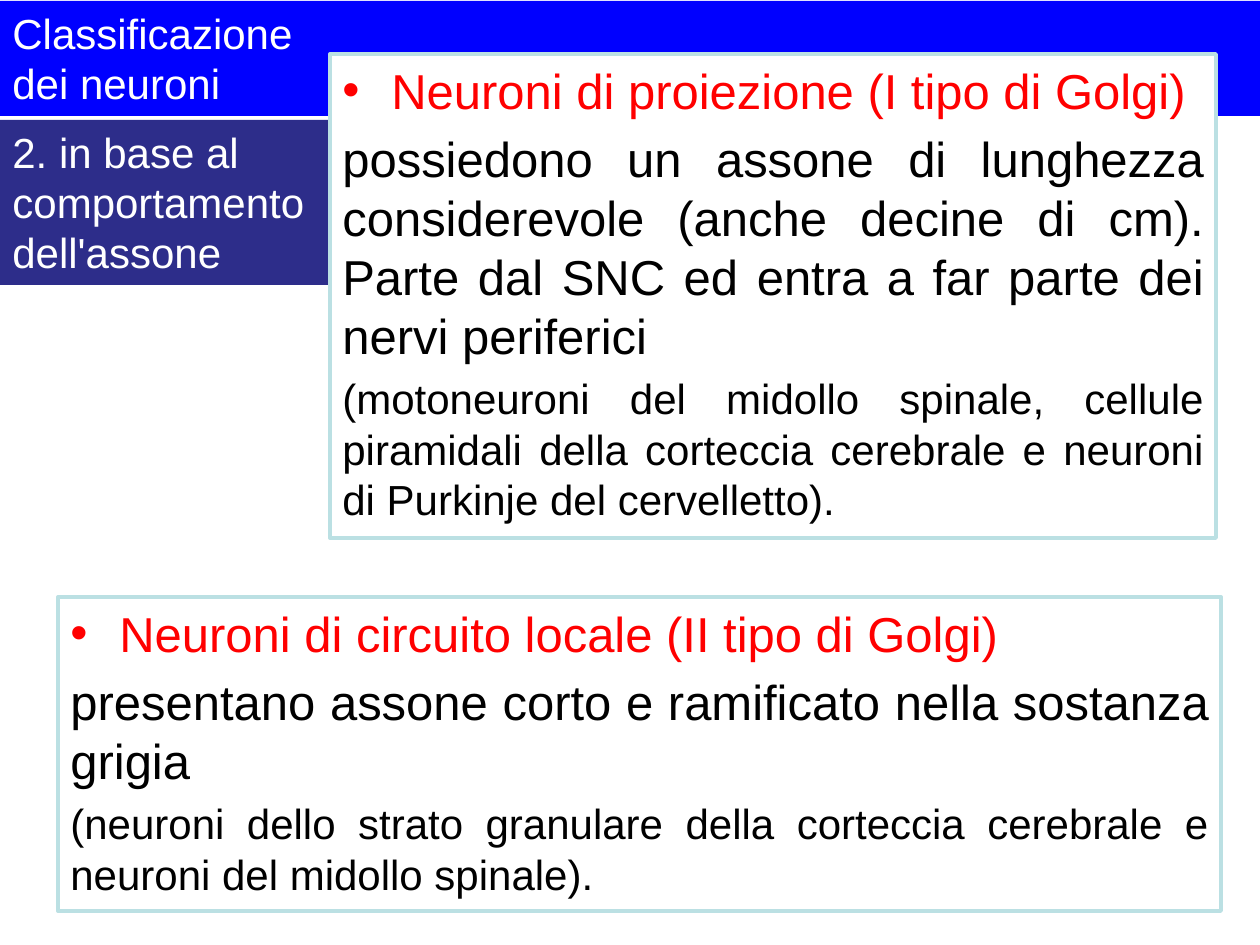
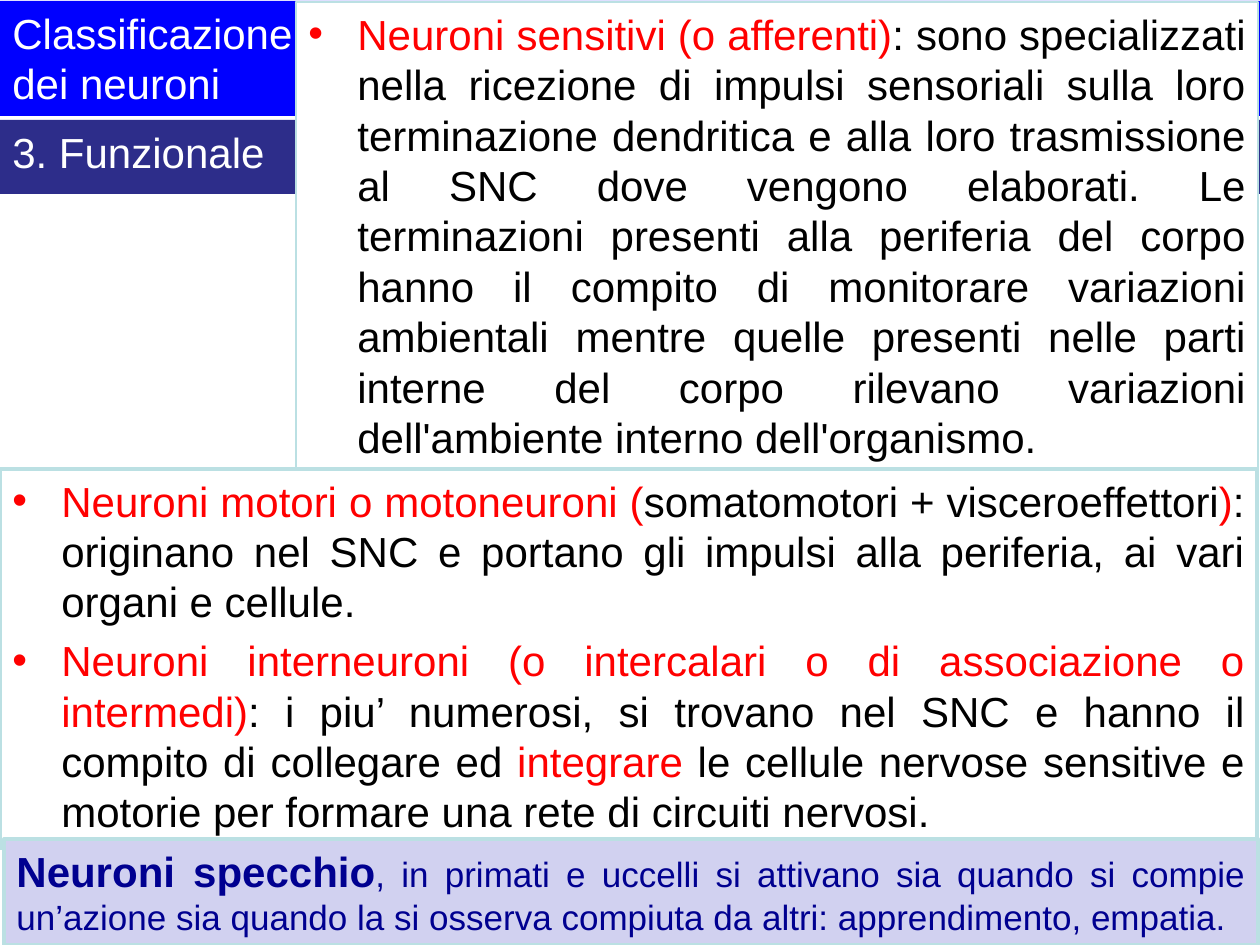
from dataclasses import dataclass

from lxml import etree
from pptx import Presentation
from pptx.dml.color import RGBColor
from pptx.enum.shapes import MSO_SHAPE
from pptx.enum.text import MSO_ANCHOR, PP_ALIGN
from pptx.oxml.ns import qn
from pptx.util import Emu, Pt

RECTANGLE = MSO_SHAPE.RECTANGLE
TOP = MSO_ANCHOR.TOP
LEFT = PP_ALIGN.LEFT
JUSTIFY = PP_ALIGN.JUSTIFY
SLIDE_WIDTH, SLIDE_HEIGHT = 1260, 945


@dataclass(frozen=True)
class Theme:
    font: str = "Arial"
    white: str = "FFFFFF"
    black: str = "000000"
    red: str = "FF0000"
    title_band: str = "0000FF"
    topic_band: str = "2D2D8A"
    border: str = "BBE0E3"
    note_fill: str = "D1D1F0"
    note_text: str = "000090"
    large: int = 28
    body: int = 24
    small: int = 20
    thick: float = 2.25
    thin: float = 0.75
    gap: float = 0.2
    indent: int = 49


THEME = Theme()


def px(length):
    return Emu(round(length * 914400 / 126))


def rgb(value):
    return RGBColor.from_string(value)


def add_panel(page, box, fill, border=None, width=THEME.thick):
    panel = page.shapes.add_shape(RECTANGLE, *map(px, box))
    panel.shadow.inherit = False
    panel.fill.solid()
    panel.fill.fore_color.rgb = rgb(fill)
    if border:
        panel.line.color.rgb = rgb(border)
        panel.line.width = Pt(width)
    else:
        panel.line.fill.background()
    frame = panel.text_frame
    frame.word_wrap = True
    frame.vertical_anchor = TOP
    return frame


def add_bullet(para):
    properties = para._p.get_or_add_pPr()
    properties.set("marL", str(px(THEME.indent)))
    properties.set("indent", str(-px(THEME.indent)))
    colour = etree.SubElement(properties, qn("a:buClr"))
    etree.SubElement(colour, qn("a:srgbClr"), val=THEME.red)
    etree.SubElement(properties, qn("a:buFont"), typeface=THEME.font)
    etree.SubElement(properties, qn("a:buChar"), char="•")


def add_paragraph(frame, spans, size=THEME.body, align=JUSTIFY, bullet=False, gap=THEME.gap):
    first = not frame.paragraphs[0].runs
    para = frame.paragraphs[0] if first else frame.add_paragraph()
    para.alignment = align
    para.space_before = Pt(0 if first else round(size * gap, 1))
    if bullet:
        add_bullet(para)
    para.font.name = THEME.font
    para.font.size = Pt(size)
    for text, colour in spans:
        span = para.add_run()
        span.text = text
        span.font.color.rgb = rgb(colour)
    return para


def add_band(page, box, fill, lines):
    frame = add_panel(page, box, fill)
    for line in lines:
        add_paragraph(frame, [(line, THEME.white)], align=LEFT, gap=0)


def add_header(page, topic_size, topic_lines):
    add_band(page, (0, 120, *topic_size), THEME.topic_band, topic_lines)
    add_band(page, (0, 1, SLIDE_WIDTH, 115), THEME.title_band, ["Classificazione", "dei neuroni"])


def add_neuron_type(page, box, heading, description, examples):
    frame = add_panel(page, box, THEME.white, THEME.border)
    add_paragraph(frame, [(heading, THEME.red)], THEME.large, bullet=True)
    add_paragraph(frame, [(description, THEME.black)], THEME.large)
    add_paragraph(frame, [(examples, THEME.black)])


def add_bullet_panel(page, box, items, width=THEME.thick):
    frame = add_panel(page, box, THEME.white, THEME.border, width)
    for spans in items:
        add_paragraph(frame, spans, bullet=True)


def add_note(page, box, term, explanation):
    frame = add_panel(page, box, THEME.note_fill, THEME.border)
    spans = [(term, THEME.note_text), (explanation, THEME.note_text)]
    term_span = add_paragraph(frame, spans, THEME.small).runs[0]
    term_span.font.size = Pt(THEME.body)
    term_span.font.bold = True


def build_axon_slide(page):
    add_header(page, (598, 165), ["2. in base al", "comportamento", "dell'assone"])
    add_neuron_type(
        page, (58, 597, 1163, 314),
        "Neuroni di circuito locale (II tipo di Golgi)",
        "presentano assone corto e ramificato nella sostanza grigia",
        "(neuroni dello strato granulare della corteccia cerebrale e neuroni del midollo spinale).",
    )
    add_neuron_type(
        page, (330, 54, 886, 484),
        "Neuroni di proiezione (I tipo di Golgi)",
        "possiedono un assone di lunghezza considerevole (anche decine di cm). "
        "Parte dal SNC ed entra a far parte dei nervi periferici",
        "(motoneuroni del midollo spinale, cellule piramidali della corteccia cerebrale "
        "e neuroni di Purkinje del cervelletto).",
    )


def build_function_slide(page):
    red, black = THEME.red, THEME.black
    add_header(page, (SLIDE_WIDTH, 74), ["3. Funzionale"])
    sensory = [
        ("Neuroni sensitivi (o afferenti)", red),
        (": sono specializzati nella ricezione di impulsi sensoriali sulla loro terminazione "
         "dendritica e alla loro trasmissione al SNC dove vengono elaborati. Le terminazioni "
         "presenti alla periferia del corpo hanno il compito di monitorare variazioni ambientali "
         "mentre quelle presenti nelle parti interne del corpo rilevano variazioni "
         "dell'ambiente interno dell'organismo.", black),
    ]
    motor = [
        ("Neuroni motori o motoneuroni (", red),
        ("somatomotori + visceroeffettori", black),
        (")", red),
        (": originano nel SNC e portano gli impulsi alla periferia, ai vari organi e cellule.", black),
    ]
    interneurons = [
        ("Neuroni interneuroni (o intercalari o di associazione o intermedi)", red),
        (": i piu’ numerosi, si trovano nel SNC e hanno il compito di collegare ed ", black),
        ("integrare", red),
        (" le cellule nervose sensitive e motorie per formare una rete di circuiti nervosi.", black),
    ]
    add_bullet_panel(page, (296, 2, 962, 471), [sensory], THEME.thin)
    add_bullet_panel(page, (0, 469, 1257, 379), [motor, interneurons])
    add_note(
        page, (4, 839, 1254, 106), "Neuroni specchio",
        ", in primati e uccelli si attivano sia quando si compie un’azione sia quando "
        "la si osserva compiuta da altri: apprendimento, empatia.",
    )


def main():
    deck = Presentation()
    deck.slide_width, deck.slide_height = px(SLIDE_WIDTH), px(SLIDE_HEIGHT)
    blank = deck.slide_layouts[6]
    for build in (build_axon_slide, build_function_slide):
        build(deck.slides.add_slide(blank))
    deck.save("out.pptx")


if __name__ == "__main__":
    main()
